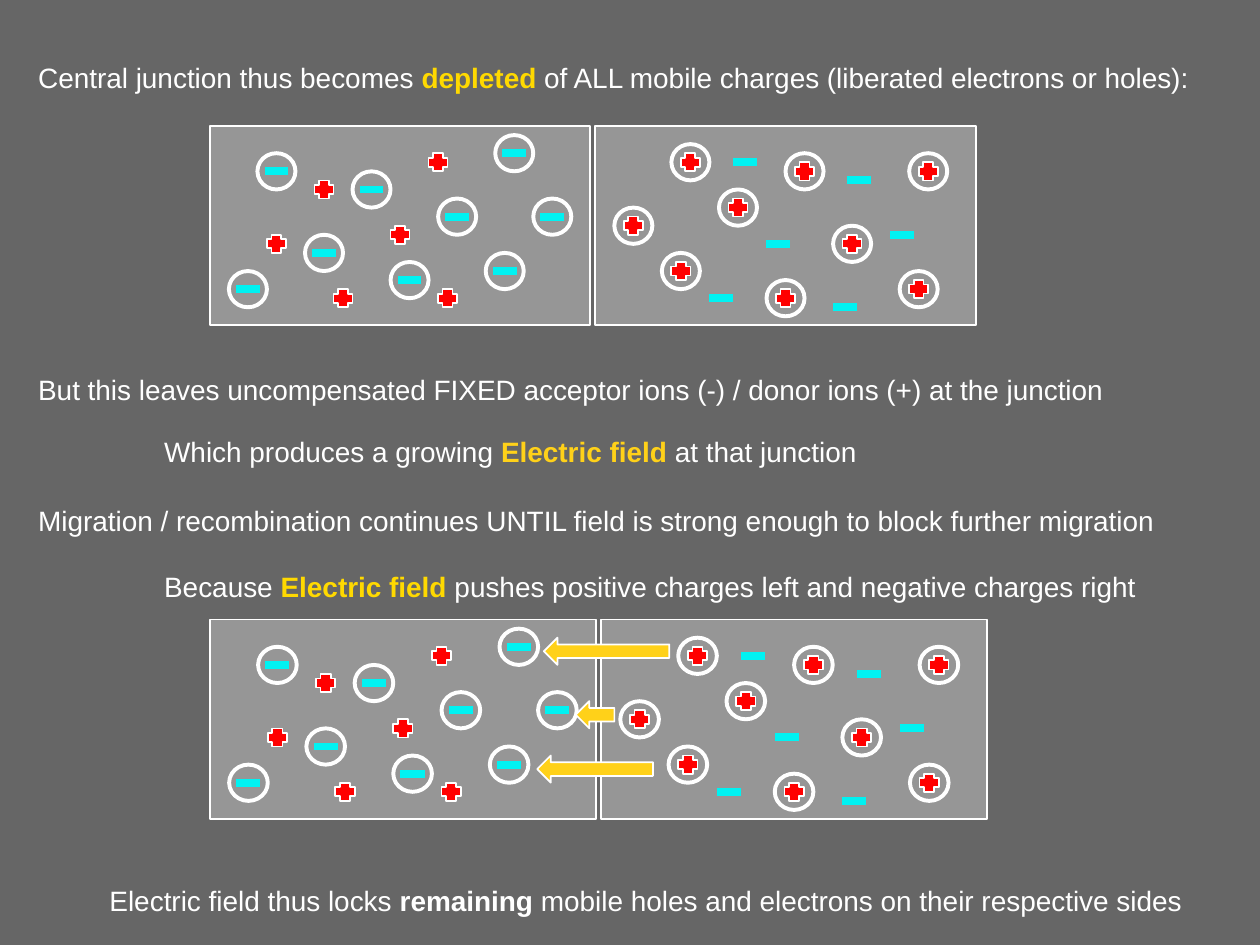
from dataclasses import dataclass

from lxml import etree
from pptx import Presentation
from pptx.dml.color import RGBColor
from pptx.enum.shapes import MSO_CONNECTOR, MSO_SHAPE
from pptx.enum.text import PP_ALIGN
from pptx.oxml.ns import qn
from pptx.util import Cm, Pt

RECTANGLE = MSO_SHAPE.RECTANGLE
OVAL = MSO_SHAPE.OVAL
CROSS = MSO_SHAPE.CROSS
LEFT_ARROW = MSO_SHAPE.LEFT_ARROW
STRAIGHT = MSO_CONNECTOR.STRAIGHT
LEFT, CENTER = PP_ALIGN.LEFT, PP_ALIGN.CENTER


@dataclass(frozen=True)
class Theme:
    background: str = "666666"
    crystal: str = "969696"
    white: str = "FFFFFF"
    gold: str = "FFD900"
    amber: str = "FFD119"
    hole: str = "FF0000"
    electron: str = "00F2F2"
    font: str = "Arial"
    text_size: float = 16
    thin: float = 1
    ring: float = 2.25
    dash: float = 4.5


THEME = Theme()

COLUMNS, ROWS = 40, 22
PANEL_GAP = 0.1
ION_SIZE, HOLE_SIZE, DASH_LENGTH = 4, 2, 2.5

ACCEPTORS = [(7, 5), (12, 14), (36, 10), (31, 16), (26, 10),
             (17, 7), (4, 18), (21, 17), (32, 3)]
HOLES = [(24, 4), (25, 19), (20, 12), (12, 7), (14, 19), (7, 13)]
DONORS = [(10, 4), (4, 11), (9, 16), (15, 9), (22, 5),
          (20, 19), (27, 13), (35, 5), (34, 18)]
ELECTRONS = [(32.25, 12), (27.75, 6), (26.25, 20),
             (15.75, 4), (19.25, 13), (13.25, 19)]
FIELD_ARROWS = [(33.9, 15, 12), (34.6, 2, 13), (37.9, 9, 4)]
ARROW_HEIGHT = 3

PLAIN = (THEME.white, False)
STRONG = (THEME.white, True)
GOLD = (THEME.gold, True)
AMBER = (THEME.amber, True)

STATEMENTS = [
    (0, 0, LEFT, [
        ("Central junction thus becomes ", PLAIN),
        ("depleted", GOLD),
        (" of ALL mobile charges (liberated electrons or holes):", PLAIN)]),
    (158.7, 0, LEFT, [
        ("But this leaves uncompensated FIXED acceptor ions (-) / "
         "donor ions (+) at the junction", PLAIN)]),
    (16.5, 2.54, LEFT, [
        ("Which produces a growing ", PLAIN),
        ("Electric field ", AMBER),
        ("at that junction", PLAIN)]),
    (19.9, 0, LEFT, [
        ("Migration / recombination continues UNTIL field is strong "
         "enough to block further migration", PLAIN)]),
    (18.7, 2.54, LEFT, [
        ("Because ", PLAIN),
        ("Electric field ", GOLD),
        ("pushes positive charges left and negative charges right", PLAIN)]),
    (160.5, 0, CENTER, [
        ("Electric field thus locks ", PLAIN),
        ("remaining", STRONG),
        (" mobile holes and electrons on their respective sides", PLAIN)]),
]


@dataclass(frozen=True)
class Grid:
    left: float
    top: float
    column: float
    row: float

    def place(self, col, row, width, height):
        return (Cm(self.left + col * self.column), Cm(self.top + row * self.row),
                Cm(width * self.column), Cm(height * self.row))

    def centre(self, col, row, size):
        return self.place(col - size / 2, row - size / 2, size, size)


def rgb(value):
    return RGBColor.from_string(value)


def add_outlined(group, preset, box, fill, weight=THEME.thin):
    shape = group.shapes.add_shape(preset, *box)
    shape.shadow.inherit = False
    shape.fill.solid()
    shape.fill.fore_color.rgb = rgb(fill)
    shape.line.color.rgb = rgb(THEME.white)
    shape.line.width = Pt(weight)


def add_ring(group, grid, col, row):
    add_outlined(group, OVAL, grid.centre(col, row, ION_SIZE),
                 THEME.crystal, THEME.ring)


def add_hole(group, grid, col, row):
    add_outlined(group, CROSS, grid.centre(col, row, HOLE_SIZE), THEME.hole)


def add_electron(group, grid, col, row):
    x, y, length, _ = grid.place(col - DASH_LENGTH / 2, row, DASH_LENGTH, 0)
    dash = group.shapes.add_connector(STRAIGHT, x, y, x + length, y)
    dash.line.color.rgb = rgb(THEME.electron)
    dash.line.width = Pt(THEME.dash)
    etree.SubElement(dash._element.spPr, qn("a:effectLst"))


def add_crystal(group, grid):
    add_outlined(group, RECTANGLE, grid.place(0, 0, COLUMNS, ROWS), THEME.crystal)


def add_n_side(group, grid):
    add_crystal(group, grid)
    for electron in ELECTRONS:
        add_electron(group, grid, *electron)
    for donor in DONORS:
        add_ring(group, grid, *donor)
        add_hole(group, grid, *donor)


def add_p_side(group, grid):
    add_crystal(group, grid)
    for acceptor in ACCEPTORS:
        add_ring(group, grid, *acceptor)
        add_electron(group, grid, *acceptor)
    for hole in HOLES:
        add_hole(group, grid, *hole)


def add_junction(slide, left, top, width, height, field_arrows=()):
    panel_width = (width - PANEL_GAP) / 2
    column, row = panel_width / COLUMNS, height / ROWS
    p_grid = Grid(left, top, column, row)
    n_grid = Grid(left + panel_width + PANEL_GAP, top, column, row)
    junction = slide.shapes.add_group_shape()
    add_n_side(junction, n_grid)
    add_p_side(junction, p_grid)
    for col, line, length in field_arrows:
        add_outlined(junction, LEFT_ARROW,
                     p_grid.place(col, line, length, ARROW_HEIGHT), THEME.amber)


def add_statements(slide, left, top, width, height):
    body = slide.shapes.add_textbox(Cm(left), Cm(top), Cm(width), Cm(height))
    frame = body.text_frame
    frame.word_wrap = True
    frame.margin_left = frame.margin_right = Cm(0.13)
    frame.margin_top = frame.margin_bottom = Cm(0.13)
    for index, (gap, indent, alignment, runs) in enumerate(STATEMENTS):
        statement = frame.add_paragraph() if index else frame.paragraphs[0]
        statement.alignment = alignment
        statement.space_before = Pt(gap)
        statement._p.get_or_add_pPr().set("marL", str(Cm(indent)))
        for words, (color, bold) in runs:
            run = statement.add_run()
            run.text = words
            run.font.name = THEME.font
            run.font.size = Pt(THEME.text_size)
            run.font.bold = bold
            run.font.color.rgb = rgb(color)


def main():
    deck = Presentation()
    deck.slide_width, deck.slide_height = Cm(25.4), Cm(19.05)
    slide = deck.slides.add_slide(deck.slide_layouts[6])
    slide.background.fill.solid()
    slide.background.fill.fore_color.rgb = rgb(THEME.background)
    add_statements(slide, 0.64, 1.1, 24.76, 17.5)
    add_junction(slide, 4.23, 2.54, 15.44, 4.02)
    add_junction(slide, 4.23, 12.49, 15.67, 4.02, FIELD_ARROWS)
    deck.save("out.pptx")


if __name__ == "__main__":
    main()
